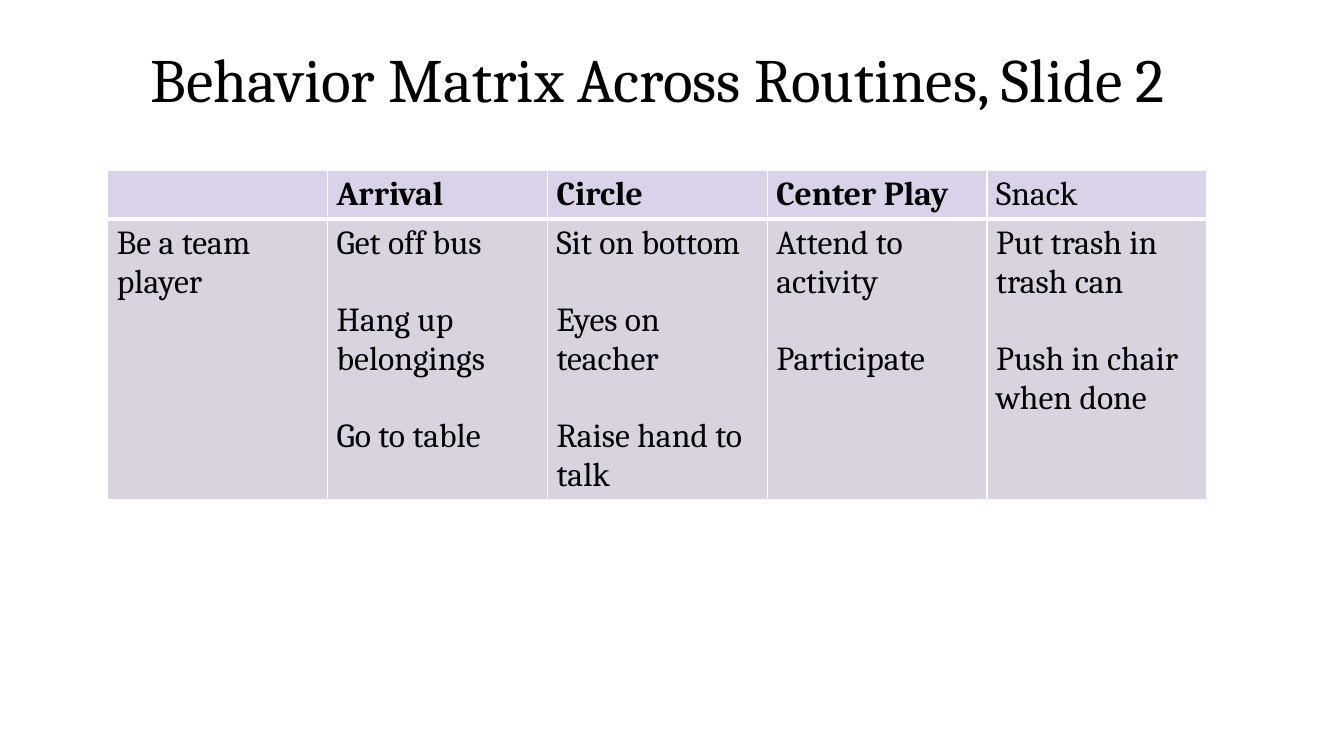
from dataclasses import dataclass

import pptx
import pptx.dml.color
import pptx.enum.text
import pptx.oxml
import pptx.oxml.ns
import pptx.table
import pptx.text.text
import pptx.util
from pptx.util import Inches

COLORS = {"text": "000000", "header": "D9D2E9", "body": "D8D3DF", "border": "FFFFFF"}
FONT = "Cambria"
COL_WIDTH = 2.18
ROW_HEIGHTS = (0.48, 2.78)
PARAGRAPH_GAP = 27.6


@dataclass(frozen=True)
class Routine:
    heading: str
    expectations: tuple[str, ...]
    bold: bool = True


ROUTINES = (
    Routine("", ("Be a team player",)),
    Routine("Arrival", ("Get off bus", "Hang up belongings", "Go to table")),
    Routine("Circle", ("Sit on bottom", "Eyes on teacher", "Raise hand to talk")),
    Routine("Center Play", ("Attend to activity", "Participate")),
    Routine("Snack", ("Put trash in trash can", "Push in chair when done"), bold=False),
)


def rgb(name: str) -> pptx.dml.color.RGBColor:
    return pptx.dml.color.RGBColor.from_string(COLORS[name])


def add_run(p: pptx.text.text._Paragraph, text: str, size: float, bold: bool = False) -> None:
    r = p.add_run()
    r.text = text
    r.font.name = FONT
    r.font.size = pptx.util.Pt(size)
    r.font.bold = bold
    r.font.color.rgb = rgb("text")


def set_borders(cell: pptx.table._Cell, top: float, bottom: float) -> None:
    tc_pr = cell._tc.get_or_add_tcPr()
    for side, width in (("L", 1), ("R", 1), ("T", top), ("B", bottom)):
        tc_pr.append(pptx.oxml.parse_xml(
            f'<a:ln{side} {pptx.oxml.ns.nsdecls("a")} w="{pptx.util.Pt(width)}">'
            f'<a:solidFill><a:srgbClr val="{COLORS["border"]}"/></a:solidFill></a:ln{side}>'
        ))


def fill_cell(cell: pptx.table._Cell, texts: tuple[str, ...], fill: str, bold: bool,
              top: float, bottom: float) -> None:
    set_borders(cell, top, bottom)
    cell.fill.solid()
    cell.fill.fore_color.rgb = rgb(fill)
    cell.margin_left = cell.margin_right = Inches(0.09)
    cell.margin_top = cell.margin_bottom = Inches(0.05)
    tf = cell.text_frame
    for i, text in enumerate(texts):
        p = tf.add_paragraph() if i else tf.paragraphs[0]
        if i:
            p.space_before = pptx.util.Pt(PARAGRAPH_GAP)
        if text:
            add_run(p, text, 24, bold)


def main() -> None:
    prs = pptx.Presentation()
    prs.slide_width, prs.slide_height = Inches(13.33), Inches(7.5)
    s = prs.slides.add_slide(prs.slide_layouts[5])

    title = s.shapes.title
    title.left, title.top = Inches(0.78), Inches(0.29)
    title.width, title.height = Inches(11.5), Inches(1.06)
    tf = title.text_frame
    tf.auto_size = pptx.enum.text.MSO_AUTO_SIZE.NONE
    tf.vertical_anchor = pptx.enum.text.MSO_ANCHOR.MIDDLE
    p = tf.paragraphs[0]
    p.alignment = pptx.enum.text.PP_ALIGN.CENTER
    p.line_spacing = 0.89
    add_run(p, "Behavior Matrix Across Routines, Slide 2", 44)

    table = s.shapes.add_table(
        len(ROW_HEIGHTS), len(ROUTINES), Inches(1.07), Inches(1.69),
        Inches(COL_WIDTH * len(ROUTINES)), Inches(sum(ROW_HEIGHTS)),
    ).table
    table.horz_banding = False
    for row, height in zip(table.rows, ROW_HEIGHTS):
        row.height = Inches(height)
    for col, routine in enumerate(ROUTINES):
        table.columns[col].width = Inches(COL_WIDTH)
        fill_cell(table.cell(0, col), (routine.heading,), "header", routine.bold, 1, 3)
        fill_cell(table.cell(1, col), routine.expectations, "body", False, 3, 1)

    prs.save("out.pptx")


if __name__ == "__main__":
    main()
